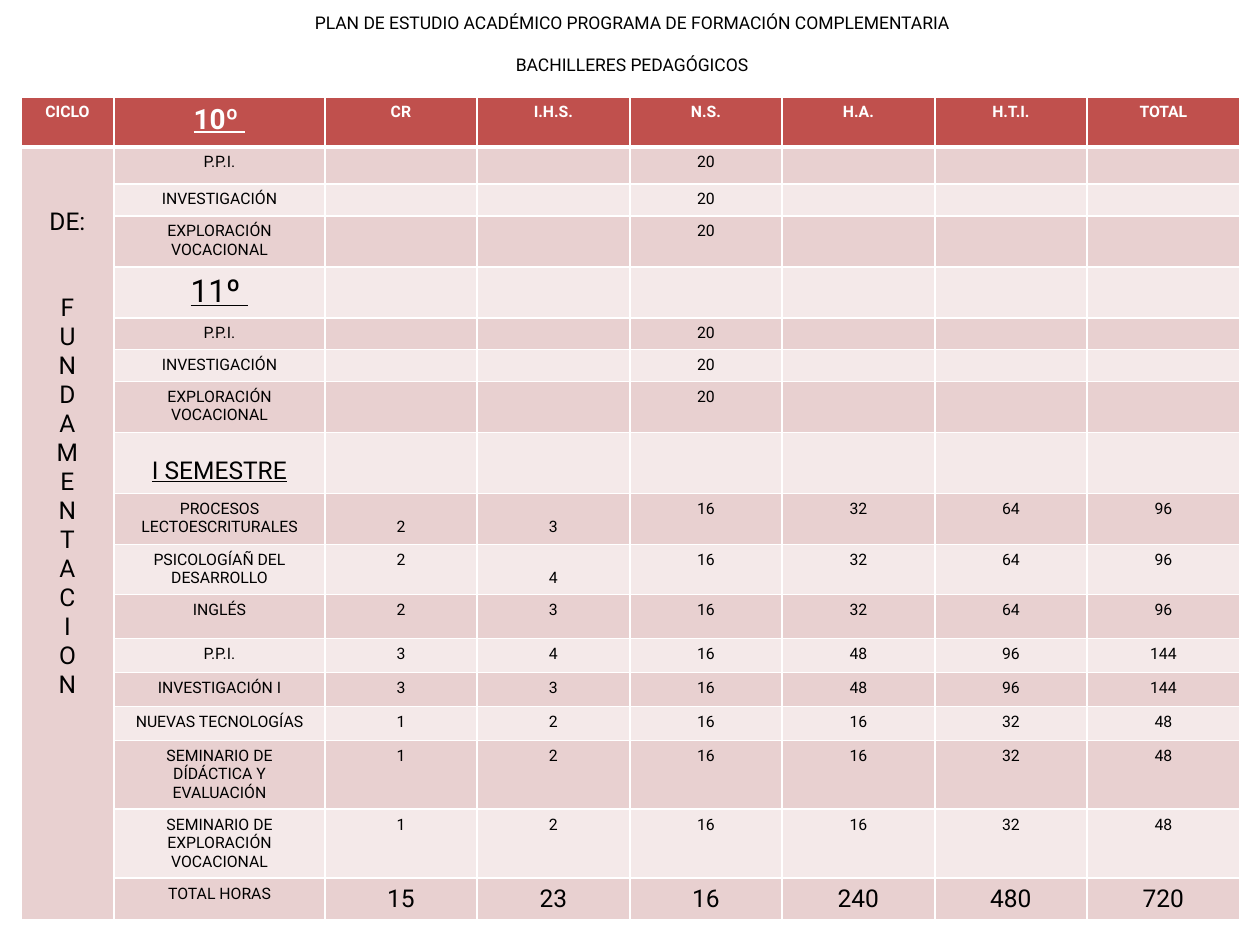
from dataclasses import dataclass
from lxml import etree
from pptx import Presentation
from pptx import util as u
from pptx.dml.color import RGBColor
from pptx.enum import text
from pptx.oxml import ns

PX = 914400 // 126


@dataclass(frozen=True)
class Theme:
    """Hold the colours, font and type sizes."""
    font: str = "Roboto"
    ink: str = "000000"
    white: str = "FFFFFF"
    head: str = "C0504D"
    bands: tuple = ("F4E9E9", "E8D0D0")
    small: int = 9
    title: int = 10
    large: int = 14
    grade: int = 16
    grade_two: int = 18
    rule: int = 1
    thick: int = 3


THEME = Theme()
COLS = [93, 211] + [152, 153] * 3
HEAD = ["CICLO", "10º ", "CR", "I.H.S.", "N.S.", "H.A.", "H.T.I.", "TOTAL"]
GRADE = [
    ["P.P.I.", "", "", "20"],
    ["INVESTIGACIÓN", "", "", "20"],
    ["EXPLORACIÓN VOCACIONAL", "", "", "20"],
]
TERM = [
    ["PROCESOS LECTOESCRITURALES", "2", "3", "16", "32", "64", "96"],
    ["PSICOLOGÍAÑ DEL DESARROLLO", "2", "4", "16", "32", "64", "96"],
    ["INGLÉS", "2", "3", "16", "32", "64", "96"],
    ["P.P.I.", "3", "4", "16", "48", "96", "144"],
    ["INVESTIGACIÓN I", "3", "3", "16", "48", "96", "144"],
    ["NUEVAS TECNOLOGÍAS", "1", "2", "16", "16", "32", "48"],
    ["SEMINARIO DE DÍDÁCTICA Y EVALUACIÓN", "1", "2", "16", "16", "32", "48"],
    ["SEMINARIO DE EXPLORACIÓN VOCACIONAL", "1", "2", "16", "16", "32", "48"],
    ["TOTAL HORAS", "15", "23", "16", "240", "480", "720"],
]
BODY = [*GRADE, ["11º "], *GRADE, ["I SEMESTRE"], *TERM]
ROWS = [HEAD] + [[""] + row for row in BODY]
HIGH = [50, 37, 32, 51, 51, 31, 31, 51, 61, 51, 50, 44, 34, 34, 34, 69, 69, 42]
LAST = len(ROWS) - 1
FORMS = {
    (0, 1): dict(size=THEME.grade, line=True),
    (4, 1): dict(size=THEME.grade_two, line=True),
    (8, 1): dict(size=THEME.large, line=True),
    **{(LAST, col): dict(size=THEME.large) for col in range(2, len(COLS))},
}
DROPS = {(8, 1): 24, (9, 2): 24, (9, 3): 24, (10, 3): 24, (1, 0): 61}


def write(frame, lines, size=THEME.small, color=THEME.ink, bold=False,
          line=False, gap=0):
    """Write centred paragraphs, with a gap in px above the second one."""
    for i, words in enumerate(lines):
        para = frame.paragraphs[0] if i == 0 else frame.add_paragraph()
        para.alignment = text.PP_ALIGN.CENTER
        para.space_before = u.Emu(gap * PX if i == 1 else 0)
        if not words:
            para._p.get_or_add_endParaRPr().set("sz", str(size * 100))
            continue
        run = para.add_run()
        run.text = words
        font = run.font
        font.name, font.size = THEME.font, u.Pt(size)
        font.bold, font.underline = bold, line
        font.color.rgb = RGBColor.from_string(color)


def edge(cell, head):
    """Draw the white rules round a cell, thicker below the header."""
    props = cell._tc.get_or_add_tcPr()
    for side in "LRTB":
        wide = THEME.thick if head and side == "B" else THEME.rule
        rule = etree.SubElement(props, ns.qn(f"a:ln{side}"), w=str(u.Pt(wide)))
        fill = etree.SubElement(rule, ns.qn("a:solidFill"))
        etree.SubElement(fill, ns.qn("a:srgbClr"), val=THEME.white)


def heading(slide, x, y, w, h):
    """Place the two-line title in its box."""
    title = slide.shapes.title
    title.left, title.top, title.width, title.height = (
        u.Emu(n * PX) for n in (x, y, w, h))
    frame = title.text_frame
    frame.word_wrap = True
    frame.auto_size = text.MSO_AUTO_SIZE.NONE
    frame.vertical_anchor = text.MSO_ANCHOR.TOP
    write(frame, ["PLAN DE ESTUDIO ACADÉMICO PROGRAMA DE FORMACIÓN COMPLEMENTARIA",
                  "BACHILLERES PEDAGÓGICOS"], size=THEME.title, gap=21)


def plan(slide, x, y):
    """Place the study plan table with its top left corner at x, y."""
    box = (x, y, sum(COLS), sum(HIGH))
    grid = slide.shapes.add_table(
        len(ROWS), len(COLS), *(u.Emu(n * PX) for n in box)).table
    for col, wide in zip(grid.columns, COLS):
        col.width = u.Emu(wide * PX)
    for r, (row, high) in enumerate(zip(ROWS, HIGH)):
        grid.rows[r].height = u.Emu(high * PX)
        head = r == 0
        for c in range(len(COLS)):
            cell = grid.cell(r, c)
            edge(cell, head)
            cell.fill.solid()
            shade = THEME.head if head else THEME.bands[1 if c == 0 else r % 2]
            cell.fill.fore_color.rgb = RGBColor.from_string(shade)
            if (r, c) in DROPS:
                cell.margin_top = u.Emu(DROPS[r, c] * PX)
            if (r, c) == (1, 0):
                write(cell.text_frame, ["DE:", *"FUNDAMENTACION"],
                      size=THEME.large, gap=57)
            else:
                write(cell.text_frame, [row[c] if c < len(row) else ""],
                      color=THEME.white if head else THEME.ink, bold=head,
                      **FORMS.get((r, c), {}))
    grid.cell(1, 0).merge(grid.cell(LAST, 0))


def main():
    """Build the slide and save it."""
    deck = Presentation()
    deck.slide_width, deck.slide_height = u.Inches(10), u.Inches(7.5)
    slide = deck.slides.add_slide(deck.slide_layouts[5])
    heading(slide, 245, 6, 774, 77)
    plan(slide, 21, 97)
    deck.save("out.pptx")


if __name__ == "__main__":
    main()
